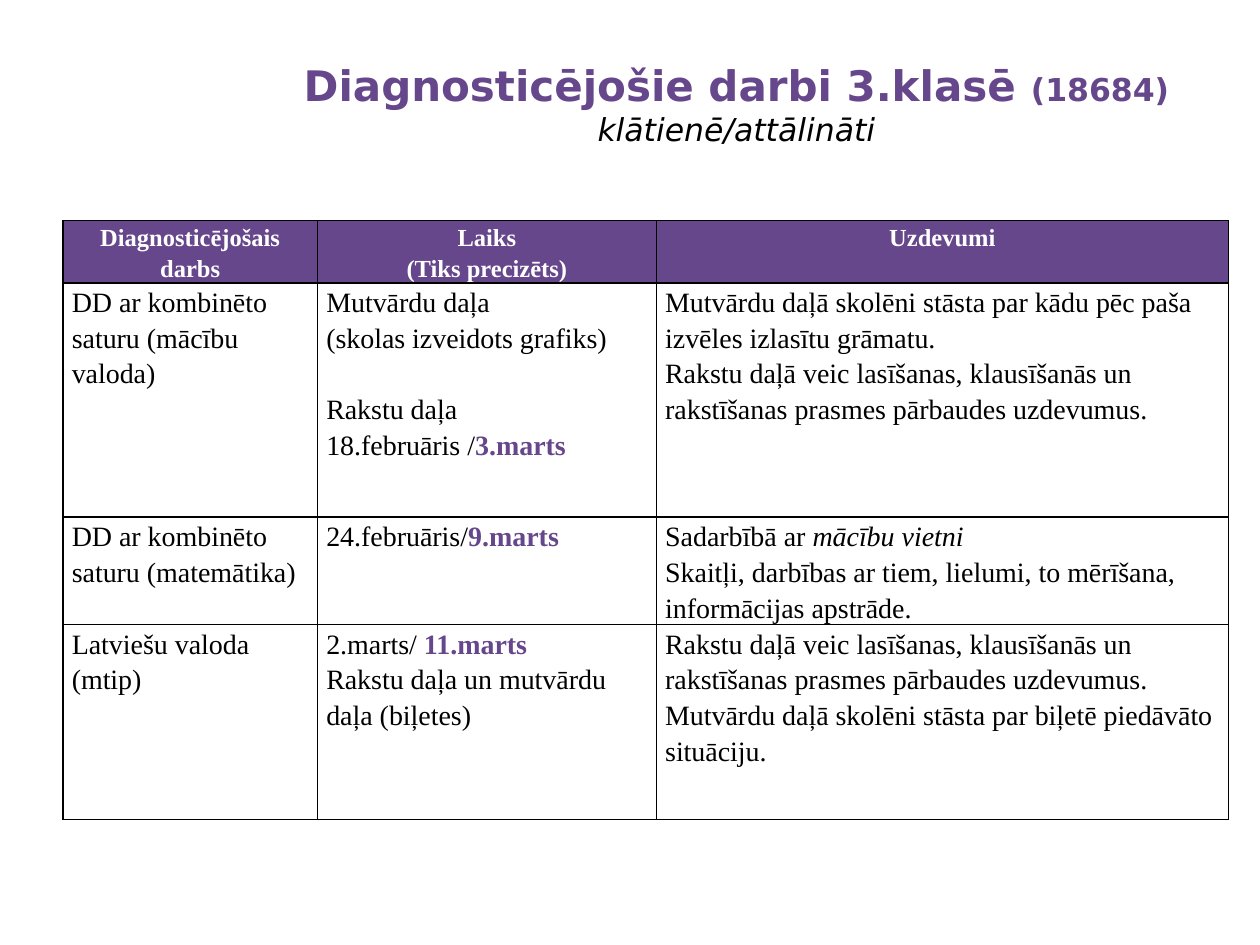
from lxml import etree
from pptx import Presentation
from pptx import util as u
from pptx.dml.color import RGBColor
from pptx.enum import text
from pptx.oxml.ns import qn

PURPLE = RGBColor(0x66, 0x47, 0x8B)
WHITE = RGBColor(0xFF, 0xFF, 0xFF)
BLACK = RGBColor(0, 0, 0)
TITLE_FONT, TABLE_FONT = "DejaVu Sans", "Times New Roman"

COLUMNS = [2.02, 2.69, 4.54]
ROWS = [0.42, 1.86, 0.67, 1.55]
BLANK_LINE = 20.4

DATE = {"color": PURPLE, "bold": True}
WRITTEN = ("Rakstu daļā veic lasīšanas, klausīšanās un "
           "rakstīšanas prasmes pārbaudes uzdevumus.")

# A cell is a list of paragraphs; a paragraph is a list of (text, format) spans.
HEADER = [
    [[("Diagnosticējošais darbs", {})]],
    [[("Laiks", {})], [("(Tiks precizēts)", {})]],
    [[("Uzdevumi", {})]],
]
BODY = [
    [
        [[("DD ar kombinēto saturu (mācību valoda)", {})]],
        [[("Mutvārdu daļa", {})],
         [("(skolas izveidots grafiks)", {})],
         [("Rakstu daļa", {"before": BLANK_LINE})],
         [("18.februāris /", {}), ("3.marts", DATE)]],
        [[("Mutvārdu daļā skolēni stāsta par kādu pēc paša izvēles "
           "izlasītu grāmatu.", {})],
         [(WRITTEN, {})]],
    ],
    [
        [[("DD ar kombinēto saturu (matemātika)", {})]],
        [[("24.februāris/", {}), ("9.marts", DATE)]],
        [[("Sadarbībā ar ", {}), ("mācību vietni", {"italic": True})],
         [("Skaitļi, darbības ar tiem, lielumi, to mērīšana, "
           "informācijas apstrāde.", {})]],
    ],
    [
        [[("Latviešu valoda (mtip)", {})]],
        [[("2.marts/ ", {}), ("11.marts", DATE)],
         [("Rakstu daļa un mutvārdu daļa (biļetes)", {})]],
        [[(WRITTEN + " Mutvārdu daļā skolēni stāsta par biļetē "
           "piedāvāto situāciju.", {})]],
    ],
]


def add_span(para, words, size=16, font=TABLE_FONT, color=BLACK,
             bold=False, italic=False, before=None):
    """Add a formatted run; before is the paragraph's space before in points."""
    span = para.add_run()
    span.text = words
    span.font.size = u.Pt(size)
    span.font.name = font
    span.font.color.rgb = color
    span.font.bold = bold
    span.font.italic = italic
    if before is not None:
        para.space_before = u.Pt(before)


def add_title(page):
    title = page.shapes.title
    title.left, title.top = u.Inches(2.19), u.Inches(0.42)
    title.width, title.height = u.Inches(7.31), u.Inches(1.13)
    frame = title.text_frame
    frame.word_wrap = True
    frame.auto_size = text.MSO_AUTO_SIZE.NONE
    frame.vertical_anchor = text.MSO_ANCHOR.TOP
    para = frame.paragraphs[0]
    para.alignment = text.PP_ALIGN.CENTER
    heading = {"font": TITLE_FONT, "color": PURPLE, "bold": True}
    add_span(para, "Diagnosticējošie darbi 3.klasē ", size=24, **heading)
    add_span(para, "(18684)", size=18, **heading)
    para.add_line_break()
    etree.SubElement(para._p[-1], qn("a:rPr"), sz="1800")
    add_span(para, "klātienē/attālināti", size=18, font=TITLE_FONT, italic=True)


def draw_borders(cell):
    properties = cell._tc.get_or_add_tcPr()
    for position, side in enumerate(("a:lnL", "a:lnR", "a:lnT", "a:lnB")):
        line = etree.Element(qn(side), w=str(u.Pt(1)))
        fill = etree.SubElement(line, qn("a:solidFill"))
        etree.SubElement(fill, qn("a:srgbClr"), val=str(BLACK))
        properties.insert(position, line)


def fill_cell(cell, paragraphs, fill=None, align=text.PP_ALIGN.LEFT, **style):
    cell.margin_left = cell.margin_right = u.Inches(0.07)
    cell.margin_top = cell.margin_bottom = 0
    if fill is None:
        cell.fill.background()
    else:
        cell.fill.solid()
        cell.fill.fore_color.rgb = fill
    draw_borders(cell)
    frame = cell.text_frame
    for index, spans in enumerate(paragraphs):
        para = frame.add_paragraph() if index else frame.paragraphs[0]
        para.alignment = align
        para.line_spacing = 1.15
        for words, extra in spans:
            add_span(para, words, **{**style, **extra})


def add_schedule(page):
    table = page.shapes.add_table(
        len(ROWS), len(COLUMNS), u.Inches(0.5), u.Inches(1.75),
        u.Inches(sum(COLUMNS)), u.Inches(sum(ROWS))).table
    table.first_row = True
    table.horz_banding = False
    for column, width in zip(table.columns, COLUMNS):
        column.width = u.Inches(width)
    for row, height in zip(table.rows, ROWS):
        row.height = u.Inches(height)
    for column, paragraphs in enumerate(HEADER):
        fill_cell(table.cell(0, column), paragraphs, fill=PURPLE,
                  align=text.PP_ALIGN.CENTER, size=14, color=WHITE, bold=True)
    for row, cells in enumerate(BODY, start=1):
        for column, paragraphs in enumerate(cells):
            fill_cell(table.cell(row, column), paragraphs)


def main():
    deck = Presentation()
    deck.slide_width, deck.slide_height = u.Inches(10), u.Inches(7.5)
    page = deck.slides.add_slide(deck.slide_layouts.get_by_name("Title Only"))
    add_title(page)
    add_schedule(page)
    deck.save("out.pptx")


if __name__ == "__main__":
    main()
